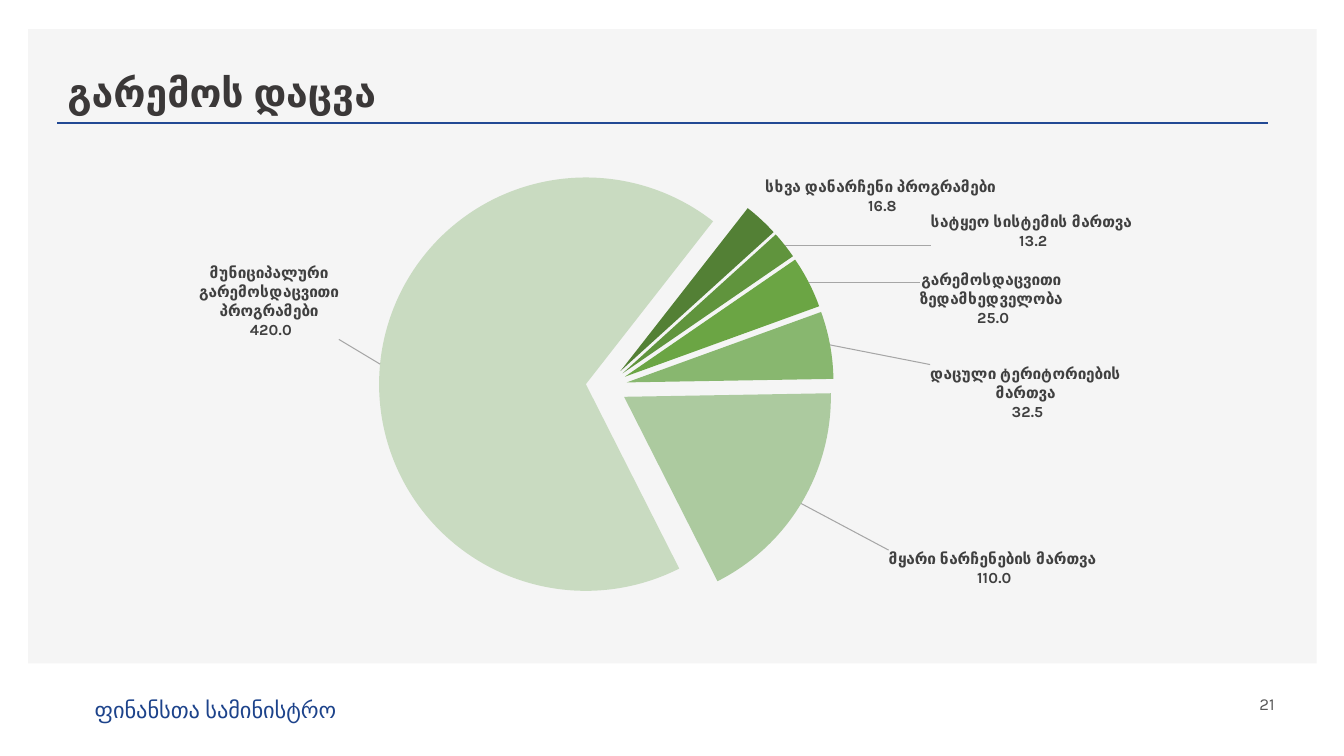
from copy import deepcopy
from dataclasses import dataclass

from pptx import Presentation
from pptx.chart.data import CategoryChartData
from pptx.dml.color import RGBColor
from pptx.enum.chart import XL_CHART_TYPE, XL_LABEL_POSITION
from pptx.enum.shapes import MSO_CONNECTOR, MSO_SHAPE
from pptx.enum.text import MSO_ANCHOR, MSO_AUTO_SIZE, PP_ALIGN
from pptx.oxml import parse_xml
from pptx.oxml.ns import nsdecls
from pptx.util import Inches, Pt
from lxml import etree

PIE = XL_CHART_TYPE.PIE
OUTSIDE = XL_LABEL_POSITION.OUTSIDE_END
RECT = MSO_SHAPE.RECTANGLE
STRAIGHT = MSO_CONNECTOR.STRAIGHT
TOP, MIDDLE, BOTTOM = MSO_ANCHOR.TOP, MSO_ANCHOR.MIDDLE, MSO_ANCHOR.BOTTOM
LEFT, RIGHT = PP_ALIGN.LEFT, PP_ALIGN.RIGHT
FIT_SHAPE = MSO_AUTO_SIZE.SHAPE_TO_FIT_TEXT


@dataclass(frozen=True)
class Theme:
    """Colours, font and type sizes of the slide."""
    font: str = "Karla"
    panel: str = "F5F5F5"
    rule: str = "224994"
    footer: str = "1D438B"
    title: str = "3B3838"
    number: str = "595959"
    label: str = "404040"
    leader: str = "A6A6A6"
    title_size: int = 28
    footer_size: int = 16
    number_size: int = 12
    label_size: int = 11


THEME = Theme()

PROGRAMS = [
    ("სხვა დანარჩენი პროგრამები", 16.8, "538035", None),
    ("სატყეო სისტემის მართვა", 13.2, "60943D", (0.12, 0.02)),
    ("გარემოსდაცვითი ზედამხედველობა", 25, "6BA544", (0.09, 0.1)),
    ("დაცული ტერიტორიების მართვა", 32.5, "88B76F", (0.08, 0.16)),
    ("მყარი ნარჩენების მართვა", 110, "ACCA9F", (0.07, 0.09)),
    ("მუნიციპალური გარემოსდაცვითი პროგრამები", 420, "C9DBC1", (-0.03, -0.05)),
]


def rgb(code):
    """Return the colour for a hex code."""
    return RGBColor.from_string(code)


def box(at):
    """Convert left, top, width and height to lengths."""
    return [Inches(v) for v in at]


def set_font(font, size, color, bold=False):
    """Apply the theme font with a size, colour and weight."""
    font.name, font.size, font.bold = THEME.font, Pt(size), bold
    font.color.rgb = rgb(color)


def chart_xml(tag, body="", attrs=""):
    """Build one chart element."""
    return parse_xml(f"<c:{tag} {nsdecls('c', 'a')} {attrs}>{body}</c:{tag}>")


def layout_xml(**values):
    """Build a manual chart layout from named settings."""
    body = "".join(f'<c:{k} val="{v}"/>' for k, v in values.items())
    return chart_xml("layout", f"<c:manualLayout>{body}</c:manualLayout>")


def add_panel(s, at):
    """Draw the grey background panel."""
    sp = s.shapes.add_shape(RECT, *box(at))
    sp.shadow.inherit = False
    sp.fill.solid()
    sp.fill.fore_color.rgb = rgb(THEME.panel)
    sp.line.fill.background()


def add_rule(s, x1, x2, y):
    """Draw the horizontal rule under the title."""
    line = s.shapes.add_connector(STRAIGHT, *box((x1, y, x2, y)))
    line.line.color.rgb = rgb(THEME.rule)
    line.line.width = Pt(2)
    sp_pr = line._element.spPr
    etree.SubElement(sp_pr, "{http://schemas.openxmlformats.org/drawingml/2006/main}effectLst")


def add_text(s, text, at, size, color, bold=False, align=LEFT, anchor=TOP, wrap=True):
    """Add a single-paragraph text box."""
    tf = s.shapes.add_textbox(*box(at)).text_frame
    tf.word_wrap = wrap
    if not wrap:
        tf.auto_size = FIT_SHAPE
    tf.vertical_anchor = anchor
    p = tf.paragraphs[0]
    p.alignment = align
    r = p.add_run()
    r.text = text
    set_font(r.font, size, color, bold)


def style_labels(series):
    """Show category and value, and shift each label to its place."""
    labels = series.data_labels
    labels.show_value = labels.show_category_name = True
    labels.number_format = r"#\ ##0.0"
    labels.number_format_is_linked = False
    labels.position = OUTSIDE
    set_font(labels.font, THEME.label_size, THEME.label, True)
    d_lbls = series._element.xpath("c:dLbls")[0]
    num_fmt = d_lbls.xpath("c:numFmt")[0]
    for i, (_, _, _, shift) in enumerate(PROGRAMS):
        label = series.points[i].data_label
        set_font(label.font, THEME.label_size, THEME.label, True)
        label.position = OUTSIDE
        d_lbl = d_lbls.xpath(f"c:dLbl[c:idx/@val='{i}']")[0]
        idx = d_lbl.xpath("c:idx")[0]
        idx.addnext(deepcopy(num_fmt))
        if shift:
            idx.addnext(layout_xml(x=shift[0], y=shift[1]))
        d_lbl.xpath("c:showCatName")[0].set("val", "1")
    for bubble in d_lbls.xpath(".//c:showBubbleSize"):
        bubble.addnext(chart_xml("separator", "\n"))
    for old in d_lbls.xpath("c:showLeaderLines"):
        d_lbls.remove(old)
    d_lbls.append(chart_xml("showLeaderLines", attrs='val="1"'))
    d_lbls.append(chart_xml("leaderLines", (
        '<c:spPr><a:ln w="9525"><a:solidFill>'
        f'<a:srgbClr val="{THEME.leader}"/></a:solidFill></a:ln></c:spPr>')))


def add_pie(s, at):
    """Add the exploded pie chart of programme spending."""
    data = CategoryChartData()
    data.categories = [name for name, *_ in PROGRAMS]
    data.add_series("Series 1", [value for _, value, *_ in PROGRAMS])
    chart = s.shapes.add_chart(PIE, *box(at), data).chart
    chart.has_title = chart.has_legend = False
    set_font(chart.font, THEME.label_size, THEME.label, True)
    plot = chart.plots[0]
    plot.vary_by_categories = True
    series = plot.series[0]
    series._element.xpath("c:tx")[0].addnext(chart_xml("explosion", attrs='val="10"'))
    for i, (_, _, color, _) in enumerate(PROGRAMS):
        fmt = series.points[i].format
        fmt.fill.solid()
        fmt.fill.fore_color.rgb = rgb(color)
        fmt.line.fill.background()
    style_labels(series)
    pie = chart._chartSpace.xpath(".//c:pieChart")[0]
    for old in pie.xpath("c:firstSliceAng"):
        pie.remove(old)
    pie.append(chart_xml("firstSliceAng", attrs='val="38"'))
    area = chart._chartSpace.xpath(".//c:plotArea")[0]
    for old in area.xpath("c:layout"):
        area.remove(old)
    area.insert(0, layout_xml(layoutTarget="inner", xMode="edge", yMode="edge",
                              x=0.28, y=0.02, w=0.47, h=0.94))


def main():
    """Build the slide and save it."""
    prs = Presentation()
    prs.slide_width, prs.slide_height = Inches(13.33), Inches(7.5)
    s = prs.slides.add_slide(prs.slide_layouts[6])
    add_panel(s, (0.28, 0.29, 12.78, 6.29))
    add_rule(s, 0.57, 12.58, 1.22)
    add_text(s, "ფინანსთა სამინისტრო", (0.84, 6.86, 2.81, 0.37),
             THEME.footer_size, THEME.footer, wrap=False)
    add_text(s, "გარემოს დაცვა", (0.57, 0.49, 12.17, 0.7),
             THEME.title_size, THEME.title, bold=True, anchor=BOTTOM)
    add_text(s, "21", (9.16, 6.78, 3.58, 0.4),
             THEME.number_size, THEME.number, align=RIGHT, anchor=MIDDLE)
    add_pie(s, (0, 1.48, 11.68, 4.8))
    prs.save("out.pptx")


if __name__ == "__main__":
    main()
